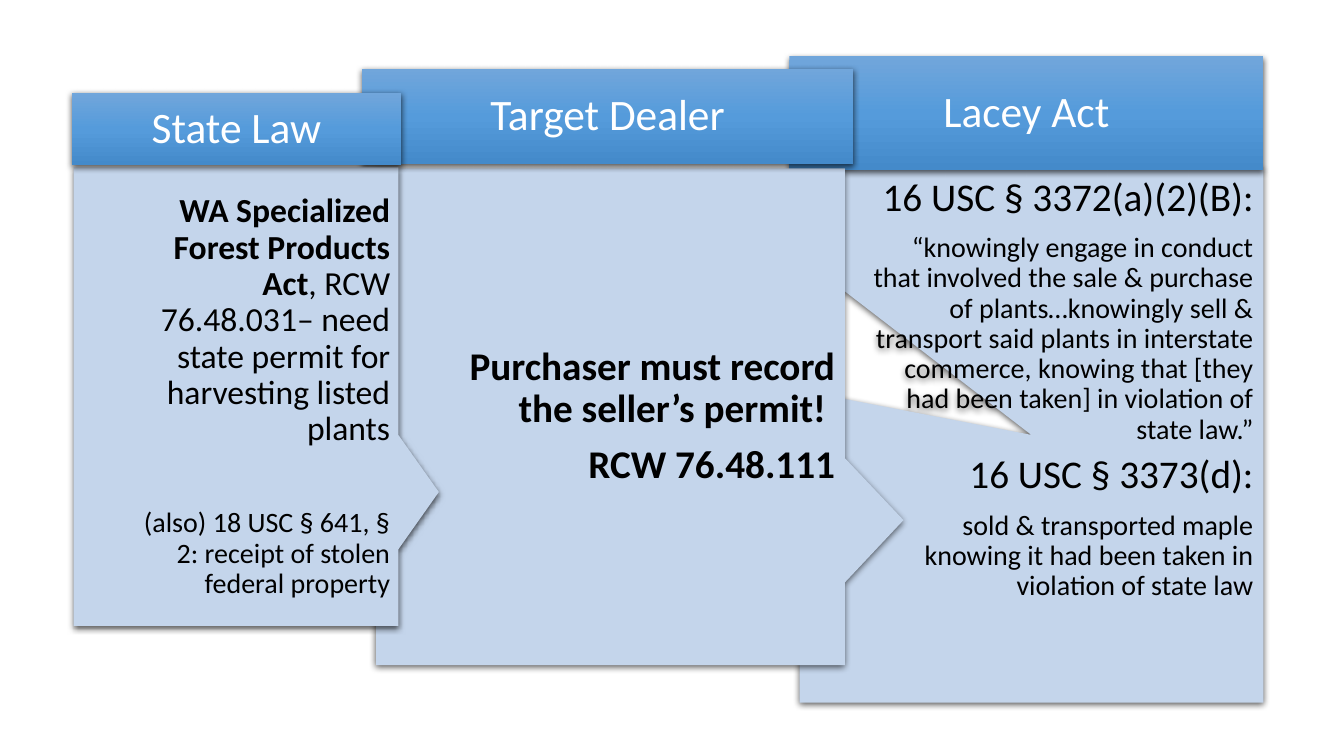
from dataclasses import dataclass

import lxml.etree
import pptx
import pptx.dml.color
import pptx.enum.shapes
import pptx.enum.text
import pptx.oxml
import pptx.oxml.ns
import pptx.shapes.autoshape
import pptx.util

RGBColor = pptx.dml.color.RGBColor
Inches = pptx.util.Inches
Align = pptx.enum.text.PP_ALIGN
Anchor = pptx.enum.text.MSO_ANCHOR
ShapeKind = pptx.enum.shapes.MSO_SHAPE

BLACK = RGBColor(0x00, 0x00, 0x00)
WHITE = RGBColor(0xFF, 0xFF, 0xFF)
PALE_BLUE = RGBColor(0xC4, 0xD5, 0xEB)
HEADER_TOP = RGBColor(0x71, 0xA6, 0xDB)
HEADER_MIDDLE = RGBColor(0x55, 0x9B, 0xDB)
HEADER_BOTTOM = RGBColor(0x44, 0x8A, 0xCA)
FONT = "Calibri"
HEADER_SIZE = 31
HEADER_INSET = 0.11
NAMESPACE = 'xmlns:a="http://schemas.openxmlformats.org/drawingml/2006/main"'


@dataclass(frozen=True)
class Span:
    text: str
    bold: bool = False


@dataclass(frozen=True)
class Para:
    spans: tuple[Span, ...]
    size: int
    space_before: int = 0


@dataclass(frozen=True)
class Box:
    left: float
    top: float
    width: float
    height: float


@dataclass(frozen=True)
class Panel:
    title: str
    header: Box
    body: Box
    pointer: tuple[float, float]
    text_offset: float
    inset: float
    anchor: Anchor
    paras: tuple[Para, ...]


PANELS = (
    Panel(
        "Lacey Act", Box(7.83, 0.56, 4.7, 1.13), Box(7.93, 1.66, 4.6, 5.31),
        (0, 0), 0.69, 0.1, Anchor.TOP,
        (
            Para((Span("16 USC § 3372(a)(2)(B):"),), 28),
            Para((Span("“knowingly engage in conduct that involved the sale & purchase "
                       "of plants…knowingly sell & transport said plants in interstate "
                       "commerce, knowing that [they had been taken] in violation of "
                       "state law.”"),), 20),
            Para((Span("16 USC § 3373(d):"),), 28),
            Para((Span("sold & transported maple knowing it had been taken in "
                       "violation of state law"),), 20),
        ),
    ),
    Panel(
        "Target Dealer", Box(3.59, 0.68, 4.87, 0.95), Box(3.73, 1.67, 4.65, 4.93),
        (0.625, 0.208), 0.59, 0.1, Anchor.MIDDLE,
        (
            Para((Span("Purchaser must record the seller’s permit! ", True),), 28),
            Para((Span("RCW 76.48.111", True),), 28),
        ),
    ),
    Panel(
        "State Law", Box(0.71, 0.92, 3.27, 0.72), Box(0.73, 1.66, 3.22, 4.55),
        (0.625, 0.208), 0.49, 0.08, Anchor.MIDDLE,
        (
            Para((Span("WA Specialized Forest Products Act", True),
                  Span(", RCW 76.48.031– need state permit for harvesting listed plants")),
                 24),
            Para((Span("(also) 18 USC § 641, § 2: receipt of stolen federal property"),),
                 20, 35),
        ),
    ),
)


def add_shadow(shape: pptx.shapes.autoshape.Shape) -> None:
    shape.shadow.inherit = False
    effects = shape._element.spPr.find(pptx.oxml.ns.qn("a:effectLst"))
    effects.append(pptx.oxml.parse_xml(
        f'<a:outerShdw {NAMESPACE} blurRad="{pptx.util.Pt(4.5)}" dist="{pptx.util.Pt(1.5)}" '
        f'dir="5400000" algn="ctr" rotWithShape="0"><a:srgbClr val="{BLACK}">'
        '<a:alpha val="63000"/></a:srgbClr></a:outerShdw>'))


def fill_header(shape: pptx.shapes.autoshape.Shape) -> None:
    shape.fill.gradient()
    gradient = shape._element.spPr.find(pptx.oxml.ns.qn("a:gradFill"))
    stops = "".join(
        f'<a:gs pos="{position}"><a:srgbClr val="{color}"/></a:gs>'
        for position, color in ((0, HEADER_TOP), (50000, HEADER_MIDDLE), (100000, HEADER_BOTTOM)))
    for child in list(gradient):
        gradient.remove(child)
    gradient.append(pptx.oxml.parse_xml(f"<a:gsLst {NAMESPACE}>{stops}</a:gsLst>"))
    lxml.etree.SubElement(gradient, pptx.oxml.ns.qn("a:lin"), ang="5400000", scaled="0")


def add_box(page: pptx.slide.Slide, kind: ShapeKind, box: Box) -> pptx.shapes.autoshape.Shape:
    shape = page.shapes.add_shape(
        kind, Inches(box.left), Inches(box.top), Inches(box.width), Inches(box.height))
    shape.line.fill.background()
    add_shadow(shape)
    return shape


def write_text(shape: pptx.shapes.autoshape.Shape, paras: tuple[Para, ...], color: RGBColor,
               align: Align, anchor: Anchor, inset: float, left_inset: float) -> None:
    frame = shape.text_frame
    frame.word_wrap = True
    frame.vertical_anchor = anchor
    frame.margin_left = Inches(left_inset)
    frame.margin_top = frame.margin_right = frame.margin_bottom = Inches(inset)
    for index, para in enumerate(paras):
        paragraph = frame.add_paragraph() if index else frame.paragraphs[0]
        paragraph.alignment = align
        paragraph.line_spacing = 0.9
        paragraph.space_before = pptx.util.Pt(para.space_before)
        paragraph.space_after = pptx.util.Pt(0.35 * para.size)
        for span in para.spans:
            run = paragraph.add_run()
            run.text = span.text
            run.font.name = FONT
            run.font.size = pptx.util.Pt(para.size)
            run.font.bold = span.bold
            run.font.color.rgb = color


def draw_panel(page: pptx.slide.Slide, panel: Panel) -> None:
    body = add_box(page, ShapeKind.RECTANGULAR_CALLOUT, panel.body)
    body.fill.solid()
    body.fill.fore_color.rgb = PALE_BLUE
    body.adjustments[0], body.adjustments[1] = panel.pointer
    write_text(body, panel.paras, BLACK, Align.RIGHT, panel.anchor, panel.inset,
               panel.text_offset)
    header = add_box(page, ShapeKind.RECTANGLE, panel.header)
    fill_header(header)
    write_text(header, (Para((Span(panel.title),), HEADER_SIZE),), WHITE, Align.CENTER,
               Anchor.MIDDLE, HEADER_INSET, HEADER_INSET)


def main() -> None:
    deck = pptx.Presentation()
    deck.slide_width = Inches(13.33)
    deck.slide_height = Inches(7.5)
    page = deck.slides.add_slide(deck.slide_layouts[6])
    for panel in PANELS:
        draw_panel(page, panel)
    deck.save("out.pptx")


if __name__ == "__main__":
    main()
